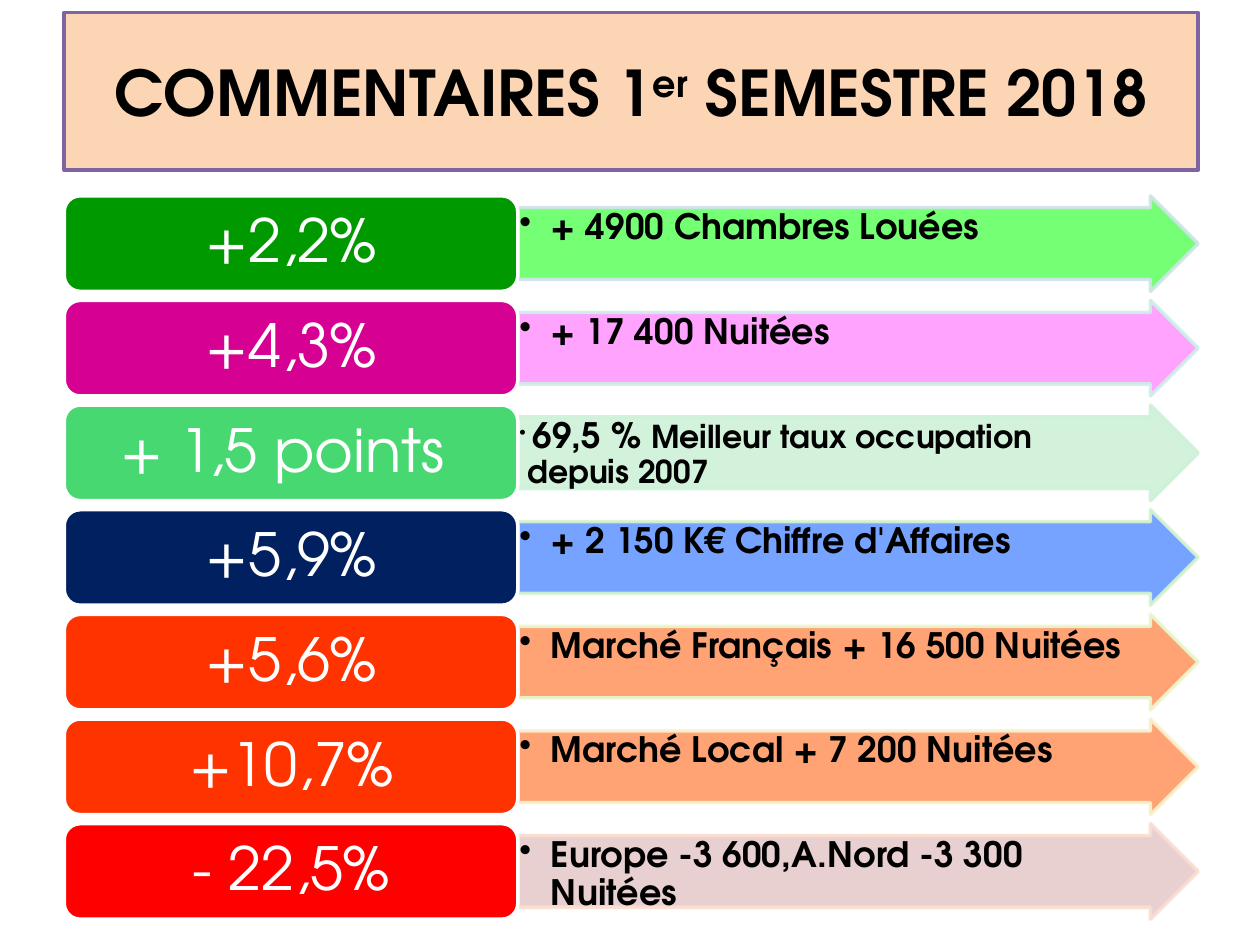
"""Build the slide commenting on the first half of 2018."""
import pptx
import pptx.dml.color
import pptx.enum.shapes
import pptx.enum.text
import pptx.oxml.ns
import pptx.util
from lxml import etree

Pt = pptx.util.Pt
SHAPES = pptx.enum.shapes.MSO_SHAPE
ANCHORS = pptx.enum.text.MSO_ANCHOR
CENTER = pptx.enum.text.PP_ALIGN.CENTER
qn = pptx.oxml.ns.qn

FONT = "TeX Gyre Adventor"
TITLE = [("COMMENTAIRES 1", 36), ("er", 36), (" SEMESTRE 2018", 36)]
OCCUPANCY = [(" ", 11), ("69,5 % ", 20), ("Meilleur taux occupation depuis 2007", 18)]
ROWS = [
    ("+2,2%", "009900", [("+ 4900 Chambres Louées", 20)], 18, "66FF66", "D0E3EA"),
    ("+4,3%", "D60093", [("+ 17 400 Nuitées", 20)], 18, "FF99FF", "CFEEE8"),
    ("+ 1,5 points ", "47D872", OCCUPANCY, 4.5, "CFF1D9", "CFF1D9"),
    ("+5,9%", "002060", [("+ 2 150 K€ Chiffre d'Affaires", 20)], 18, "6699FF", "D6F4CE"),
    ("+5,6%", "FF3300", [("Marché Français + 16 500 Nuitées", 20)], 18, "FF9966", "EBF7CE"),
    ("+10,7%", "FF3300", [("Marché Local + 7 200 Nuitées", 20)], 18, "FF9966", "F9F1CF"),
    ("- 22,5%", "FF0000", [("Europe -3 600,A.Nord -3 300 Nuitées", 20)], 18, "E7CBCB", "FCDDCF"),
]
LEFT, LABEL_WIDTH, ARROW_WIDTH = 36.75, 259.2, 388.8
ROW_TOP, ROW_PITCH, ROW_HEIGHT = 111.9, 59.8, 54.6


def color(value):
    return pptx.dml.color.RGBColor.from_string(value)


def add_box(page, kind, place, fill, line, insets, anchor):
    box = page.shapes.add_shape(kind, *(Pt(length) for length in place))
    box.shadow.inherit = False
    box.fill.solid()
    box.fill.fore_color.rgb = color(fill)
    box.line.color.rgb = color(line)
    box.line.width = Pt(2)
    frame = box.text_frame
    frame.word_wrap = True
    frame.vertical_anchor = anchor
    frame.margin_left, frame.margin_top, frame.margin_right, frame.margin_bottom = (
        Pt(inset) for inset in insets)
    return box


def write(para, spans, ink, bold, align=None):
    para.alignment = align
    for text, size in spans:
        span = para.add_run()
        span.text = text
        span.font.name = FONT
        span.font.size = Pt(size)
        span.font.bold = bold
        span.font.color.rgb = color(ink)


def add_title(page):
    box = add_box(page, SHAPES.ROUND_2_DIAG_RECTANGLE, (LEFT, 7.2, 648, 90),
                  "FCD5B5", "8064A2", (7.2, 3.6, 7.2, 3.6), ANCHORS.MIDDLE)
    box.adjustments[0] = box.adjustments[1] = 0
    para = box.text_frame.paragraphs[0]
    write(para, TITLE, "000000", True, CENTER)
    para.runs[1].font._element.set("baseline", "30000")


def add_arrow(page, top, spans, indent, fill, line):
    place = (LEFT + LABEL_WIDTH, top, ARROW_WIDTH, ROW_HEIGHT)
    box = add_box(page, SHAPES.RIGHT_ARROW, place, fill, line, (0.9, 0.9, 14, 0.9), ANCHORS.TOP)
    box.adjustments[0], box.adjustments[1] = 0.75, 0.5
    for shade in box._element.spPr.iter(qn("a:srgbClr")):
        etree.SubElement(shade, qn("a:alpha"), val="90000")
    para = box.text_frame.paragraphs[0]
    para.level = 1
    para.line_spacing = 0.9
    settings = para._p.get_or_add_pPr()
    settings.set("marL", str(Pt(indent)))
    settings.set("indent", str(-Pt(indent)))
    etree.SubElement(settings, qn("a:buChar"), char="•")
    write(para, spans, "000000", True, pptx.enum.text.PP_ALIGN.LEFT)


def add_label(page, top, text, fill):
    place = (LEFT, top, LABEL_WIDTH, ROW_HEIGHT)
    box = add_box(page, SHAPES.ROUNDED_RECTANGLE, place, fill, "FFFFFF",
                  (10, 5, 10, 5), ANCHORS.MIDDLE)
    para = box.text_frame.paragraphs[0]
    para.line_spacing = 0.9
    write(para, [(text, 34)], "FFFFFF", False, CENTER)


def main():
    deck = pptx.Presentation()
    deck.slide_width, deck.slide_height = Pt(720), Pt(540)
    page = deck.slides.add_slide(deck.slide_layouts[6])
    add_title(page)
    for index, (label, label_fill, spans, indent, fill, line) in enumerate(ROWS):
        top = ROW_TOP + index * ROW_PITCH
        add_arrow(page, top, spans, indent, fill, line)
        add_label(page, top, label, label_fill)
    deck.save("out.pptx")


if __name__ == "__main__":
    main()
